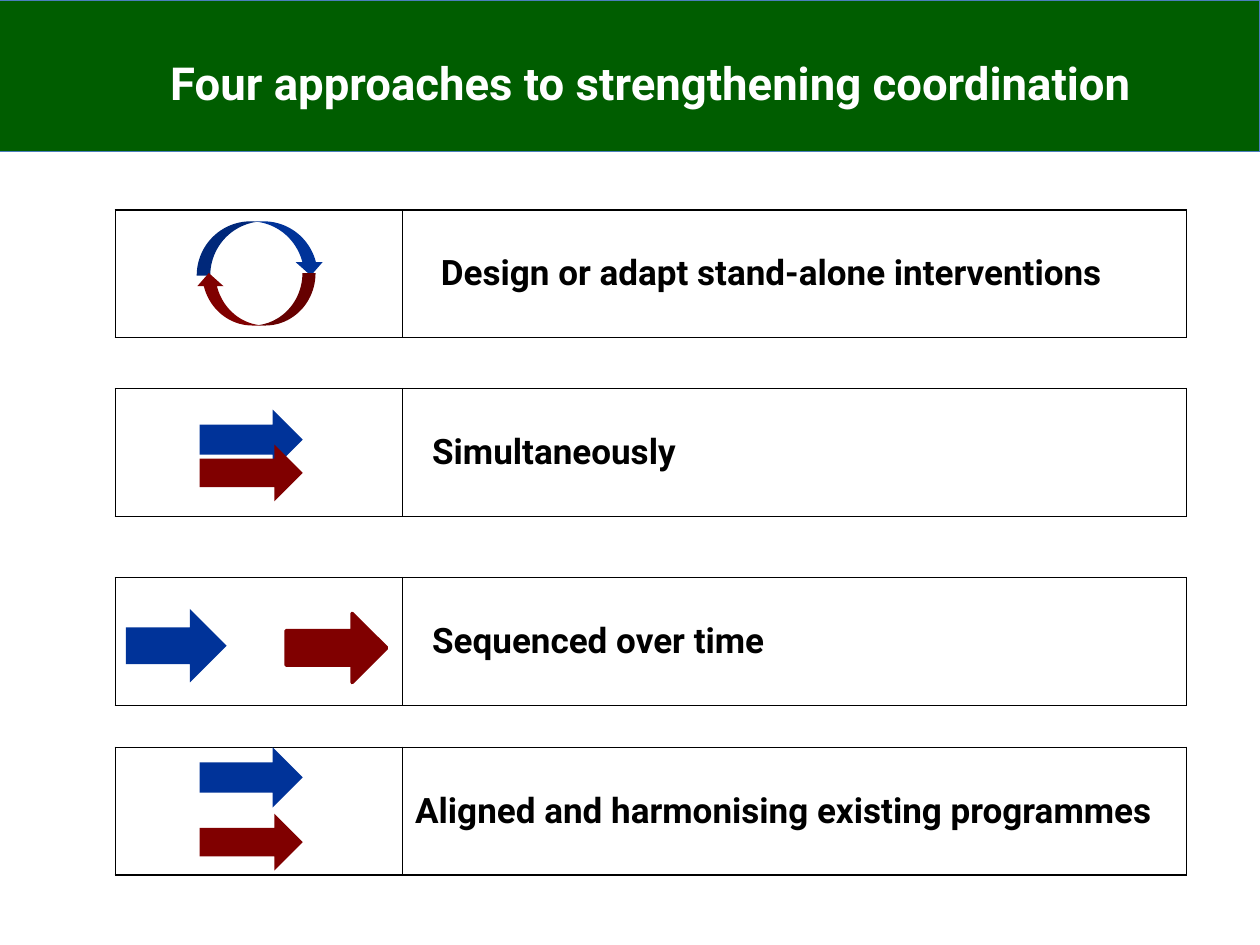
from dataclasses import dataclass

from lxml import etree
from pptx import Presentation
from pptx.dml.color import RGBColor
from pptx.enum import shapes, text
from pptx.oxml import ns
from pptx.util import Pt

GREEN, BLUE, RED = "005D00", "003399", "800000"
BLACK, WHITE, BAND_LINE = "000000", "FFFFFF", "4B7EBC"
TABLE_LEFT, ICON_WIDTH, TEXT_WIDTH, ROW_HEIGHT = 66, 164, 448, 73
CURVED = shapes.MSO_SHAPE.CURVED_DOWN_ARROW
RIGHT = shapes.MSO_SHAPE.RIGHT_ARROW


@dataclass
class Arrow:
    left: float
    top: float  # measured from the top of its row
    width: float
    height: float
    color: str
    kind: int = RIGHT
    rotation: float = 0
    line: float = 0


@dataclass
class Approach:
    label: str
    top: float
    indent: float
    arrows: list[Arrow]


APPROACHES = [
    Approach("Design or adapt stand-alone interventions", 120, 22, [
        Arrow(112.4, 6.5, 73, 31, BLUE, CURVED),
        Arrow(111.8, 36, 68.5, 30, RED, CURVED, rotation=180)]),
    Approach("Simultaneously", 222, 17, [
        Arrow(114, 12, 59, 34.5, BLUE),
        Arrow(114, 32, 59, 32.5, RED)]),
    Approach("Sequenced over time", 330, 17, [
        Arrow(163.5, 20.5, 57.5, 39.5, RED, line=2),
        Arrow(72, 18, 57.5, 42, BLUE)]),
    Approach("Aligned and harmonising existing programmes", 427, 7.2, [
        Arrow(114, 0, 59, 34.5, BLUE),
        Arrow(114, 38, 59, 32.5, RED)]),
]


def rgb(value: str) -> RGBColor:
    return RGBColor.from_string(value)


def write(tf, content: str, size: float, color: str, align) -> None:
    p = tf.paragraphs[0]
    p.alignment = align
    r = p.add_run()
    r.text = content
    font = {"name": "Roboto", "size": Pt(size), "bold": True}
    for name, value in font.items():
        setattr(r.font, name, value)
    r.font.color.rgb = rgb(color)


def add_filled(s, kind, box, fill: str, line: str, line_width: float):
    sp = s.shapes.add_shape(kind, *map(Pt, box))
    sp.shadow.inherit = False
    sp.fill.solid()
    sp.fill.fore_color.rgb = rgb(fill)
    if line_width:
        sp.line.color.rgb = rgb(line)
        sp.line.width = Pt(line_width)
    else:
        sp.line.fill.background()
    return sp


def add_borders(cell) -> None:
    """Draw a thin black line on all four sides; lines must precede the fill."""
    tc_pr = cell._tc.get_or_add_tcPr()
    for i, side in enumerate(("lnL", "lnR", "lnT", "lnB")):
        ln = etree.Element(ns.qn(f"a:{side}"), w=str(Pt(1)))
        fill = etree.SubElement(ln, ns.qn("a:solidFill"))
        etree.SubElement(fill, ns.qn("a:srgbClr"), val=BLACK)
        tc_pr.insert(i, ln)


def add_approach(s, item: Approach) -> None:
    frame = s.shapes.add_table(1, 2, Pt(TABLE_LEFT), Pt(item.top),
                               Pt(ICON_WIDTH + TEXT_WIDTH), Pt(ROW_HEIGHT))
    table = frame.table
    table.first_row = table.horz_banding = False
    for i, width in enumerate((ICON_WIDTH, TEXT_WIDTH)):
        table.columns[i].width = Pt(width)
        cell = table.cell(0, i)
        cell.fill.background()
        cell.vertical_anchor = text.MSO_ANCHOR.MIDDLE
        add_borders(cell)
    label = table.cell(0, 1)
    label.margin_left = Pt(item.indent)
    write(label.text_frame, item.label, 20, BLACK, text.PP_ALIGN.LEFT)
    for a in item.arrows:
        box = (a.left, item.top + a.top, a.width, a.height)
        sp = add_filled(s, a.kind, box, a.color, a.color, a.line)
        sp.rotation = a.rotation


def add_title(s, content: str) -> None:
    band = add_filled(s, shapes.MSO_SHAPE.RECTANGLE, (-1.5, 0, 721.5, 86.5),
                      GREEN, BAND_LINE, 0.75)
    title = s.shapes.title
    title._element.addprevious(band._element)  # keep the band behind the title
    place = {"left": 48, "top": 2, "width": 648, "height": 90}
    for name, value in place.items():
        setattr(title, name, Pt(value))
    title.text_frame.vertical_anchor = text.MSO_ANCHOR.MIDDLE
    write(title.text_frame, content, 26, WHITE, text.PP_ALIGN.CENTER)


def main() -> None:
    prs = Presentation()
    prs.slide_width, prs.slide_height = Pt(720), Pt(540)
    s = prs.slides.add_slide(prs.slide_layouts[5])
    add_title(s, "Four approaches to strengthening coordination")
    for item in APPROACHES:
        add_approach(s, item)
    prs.save("out.pptx")


if __name__ == "__main__":
    main()
